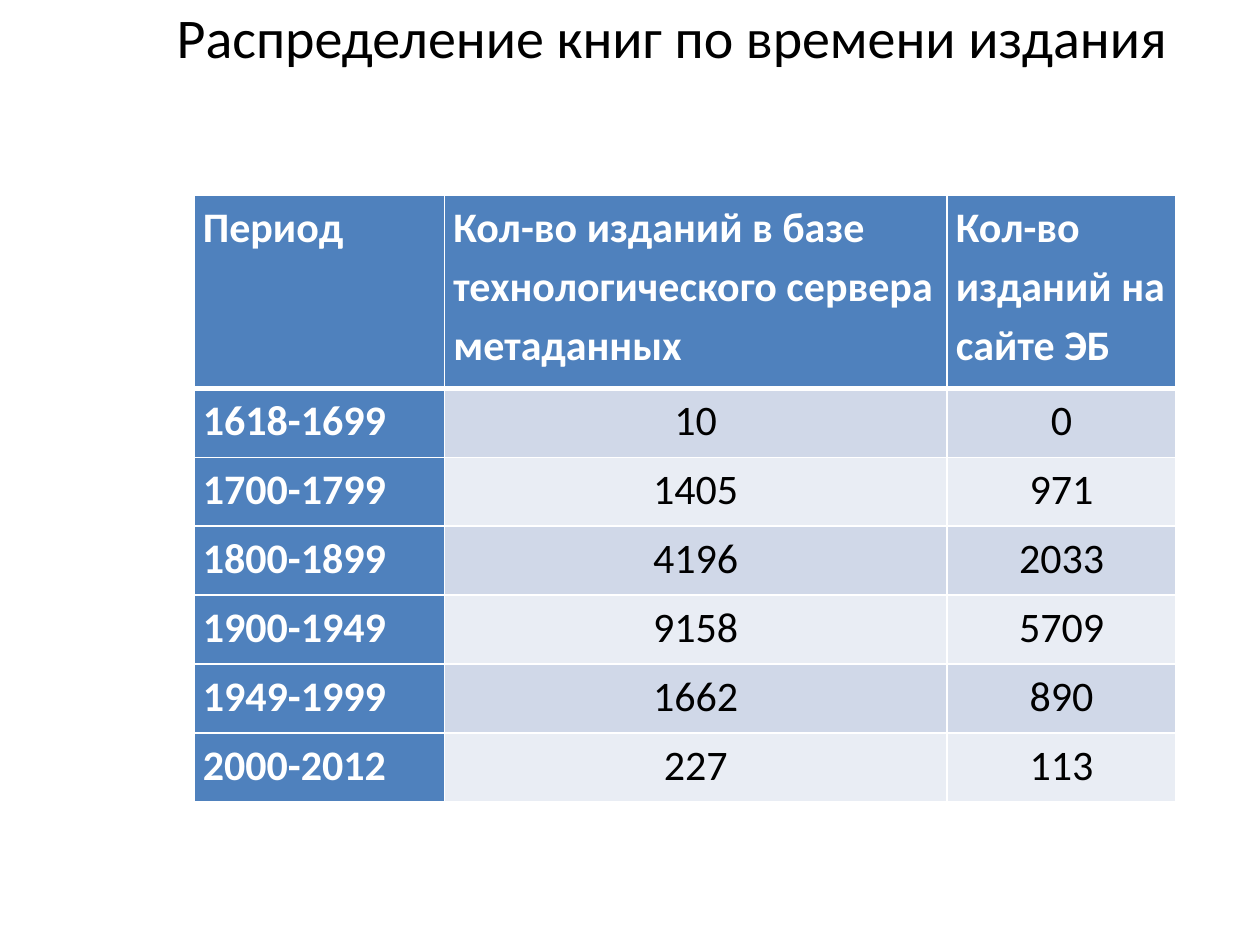
from lxml import etree
from pptx import Presentation
from pptx.dml.color import RGBColor
from pptx.enum.text import MSO_ANCHOR, PP_ALIGN
from pptx.oxml.ns import qn
from pptx.util import Cm, Pt

TOP = MSO_ANCHOR.TOP
LEFT, MID = PP_ALIGN.LEFT, PP_ALIGN.CENTER
COLORS = {"head": "4F81BD", "odd": "D0D8E8", "even": "E9EDF4",
          "white": "FFFFFF", "black": "000000"}
ROWS = [
    ("Период", "Кол-во изданий в базе технологического сервера метаданных",
     "Кол-во изданий на сайте ЭБ"),
    ("1618-1699", "10", "0"),
    ("1700-1799", "1405", "971"),
    ("1800-1899", "4196", "2033"),
    ("1900-1949", "9158", "5709"),
    ("1949-1999", "1662", "890"),
    ("2000-2012", "227", "113"),
]
WIDTHS = [5.05, 10.13, 4.62]
HEIGHTS = [3.89] + [1.39] * 6


def write(para, text, size, color, bold, align):
    para.alignment = align
    run = para.add_run()
    run.text = text
    font = run.font
    font.name, font.size, font.bold = "Calibri", Pt(size), bold
    font.color.rgb = RGBColor.from_string(COLORS[color])


def edge(cell, side, width):
    """Draw one white border; call before the cell is filled."""
    line = etree.SubElement(cell._tc.get_or_add_tcPr(), qn("a:ln" + side),
                            w=str(Pt(width)))
    fill = etree.SubElement(line, qn("a:solidFill"))
    etree.SubElement(fill, qn("a:srgbClr"), val=COLORS["white"])


prs = Presentation()
prs.slide_width, prs.slide_height = Cm(25.4), Cm(19.05)
slide = prs.slides.add_slide(prs.slide_layouts[5])

title = slide.shapes.title
title.left, title.top = Cm(2.34), Cm(-0.08)
title.width, title.height = Cm(22.43), Cm(3.18)
title.text_frame.vertical_anchor = TOP
write(title.text_frame.paragraphs[0], "Распределение книг по времени издания",
      32, "black", False, MID)

frame = slide.shapes.add_table(len(ROWS), len(WIDTHS), Cm(3.91), Cm(3.94),
                               Cm(sum(WIDTHS)), Cm(sum(HEIGHTS)))
table = frame.table
table.first_col = True
for col, width in zip(table.columns, WIDTHS):
    col.width = Cm(width)
for row, height in zip(table.rows, HEIGHTS):
    row.height = Cm(height)

for r, texts in enumerate(ROWS):
    for c, text in enumerate(texts):
        cell = table.cell(r, c)
        head = r == 0 or c == 0
        cell.margin_left = cell.margin_right = Cm(0.18)
        cell.margin_top = cell.margin_bottom = 0
        cell.vertical_anchor = TOP
        for side in "LRTB":
            thick = (r == 0 and side == "B") or (r == 1 and side == "T")
            edge(cell, side, 3 if thick else 1)
        cell.fill.solid()
        tone = "head" if head else "odd" if r % 2 else "even"
        cell.fill.fore_color.rgb = RGBColor.from_string(COLORS[tone])
        para = cell.text_frame.paragraphs[0]
        para.line_spacing = 1.15
        write(para, text, 24, "white" if head else "black", head,
              LEFT if head else MID)

prs.save("out.pptx")
